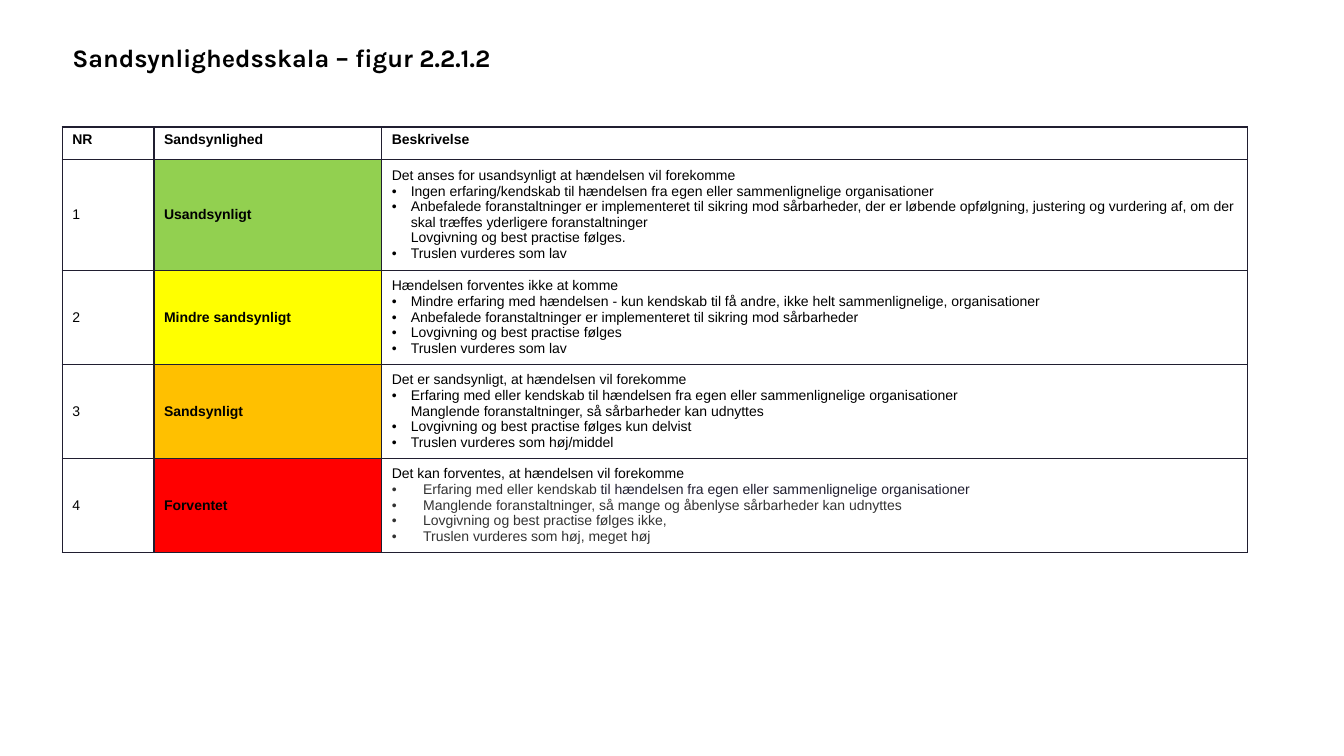
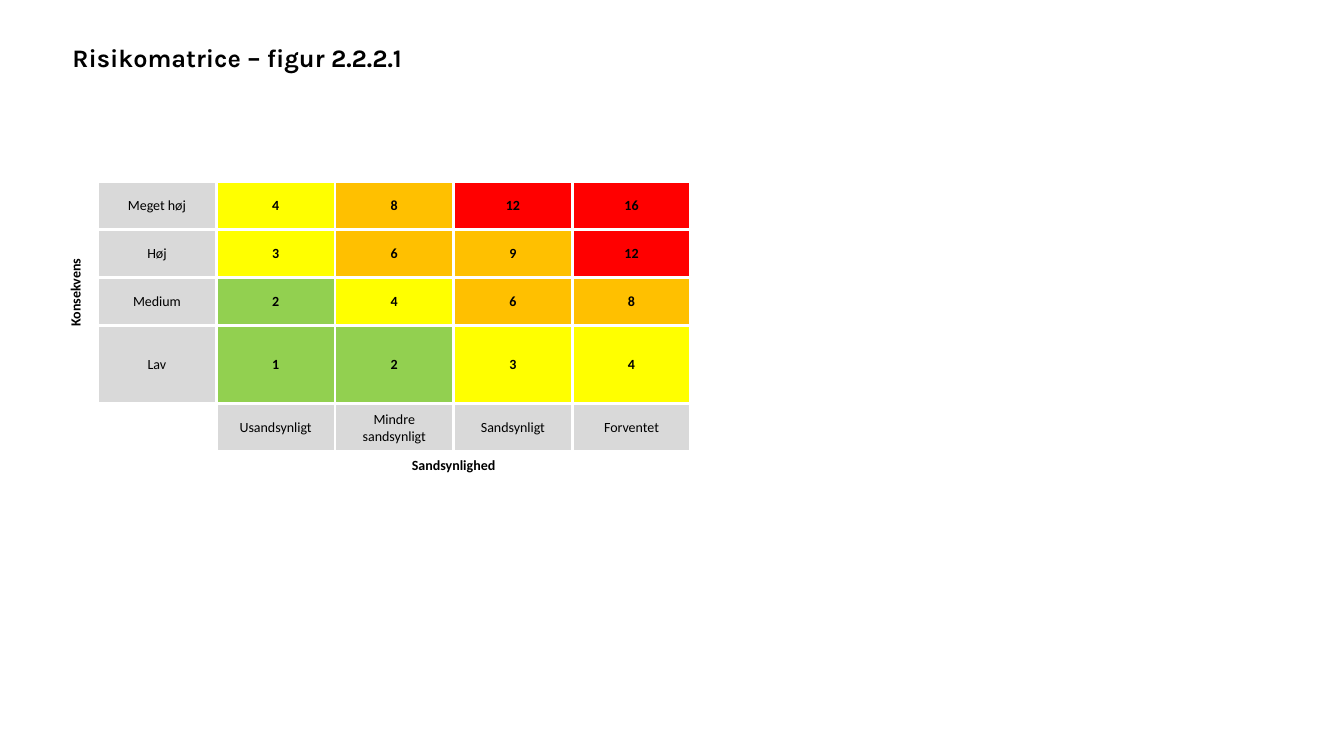
from dataclasses import dataclass

from pptx import Presentation
from pptx.dml.color import RGBColor
from pptx.enum.text import MSO_ANCHOR as Anchor, MSO_AUTO_SIZE as AutoSize, PP_ALIGN as Align
from pptx.oxml.ns import qn
from pptx.util import Cm, Pt
from lxml.etree import SubElement


@dataclass(frozen=True)
class Theme:
    black: str = "000000"
    white: str = "FFFFFF"
    ink: str = "201E30"
    charcoal: str = "333333"
    label: str = "D9D9D9"
    green: str = "92D050"
    yellow: str = "FFFF00"
    orange: str = "FFC000"
    red: str = "FF0000"
    title_font: str = "Karla"
    scale_font: str = "Arial"
    matrix_font: str = "Calibri"
    title_size: int = 18
    table_size: int = 10
    scale_border: float = 1
    matrix_border: float = 2.25


THEME = Theme()
LEFT = 1.57
TITLE_BOX = (LEFT, 0.94, 14.43, 1.02)
LEVELS = ["Usandsynligt", "Mindre sandsynligt", "Sandsynligt", "Forventet"]
LEVEL_COLORS = [THEME.green, THEME.yellow, THEME.orange, THEME.red]
CONSEQUENCES = ["Lav", "Medium", "Høj", "Meget høj"]

# Each description is a lead sentence followed by its bullets.
DESCRIPTIONS = [
    ["Det anses for usandsynligt at hændelsen vil forekomme",
     "Ingen erfaring/kendskab til hændelsen fra egen eller sammenlignelige organisationer",
     "Anbefalede foranstaltninger er implementeret til sikring mod sårbarheder, "
     "der er løbende opfølgning, justering og vurdering af, om der skal træffes "
     "yderligere foranstaltninger\nLovgivning og best practise følges.",
     "Truslen vurderes som lav"],
    ["Hændelsen forventes ikke at komme",
     "Mindre erfaring med hændelsen - kun kendskab til få andre, "
     "ikke helt sammenlignelige, organisationer",
     "Anbefalede foranstaltninger er implementeret til sikring mod sårbarheder",
     "Lovgivning og best practise følges",
     "Truslen vurderes som lav"],
    ["Det er sandsynligt, at hændelsen vil forekomme",
     "Erfaring med eller kendskab til hændelsen fra egen eller sammenlignelige "
     "organisationer\nManglende foranstaltninger, så sårbarheder kan udnyttes",
     "Lovgivning og best practise følges kun delvist",
     "Truslen vurderes som høj/middel"],
    ["Det kan forventes, at hændelsen vil forekomme",
     [("Erfaring med eller kendskab ", THEME.charcoal),
      ("til hændelsen fra egen eller sammenlignelige organisationer", THEME.ink)],
     "Manglende foranstaltninger, så mange og åbenlyse sårbarheder kan udnyttes",
     "Lovgivning og best practise følges ikke,",
     "Truslen vurderes som høj, meget høj"],
]


def write_text(paragraph, text, *, font, size=THEME.table_size, color=THEME.black,
               bold=False, align=Align.LEFT):
    """Append text to the paragraph; a newline becomes a line break."""
    paragraph.alignment = align
    for index, line in enumerate(text.split("\n")):
        if index:
            paragraph.add_line_break()
        run = paragraph.add_run()
        run.text = line
        run.font.name = font
        run.font.size = Pt(size)
        run.font.bold = bold
        run.font.color.rgb = RGBColor.from_string(color)


def set_bullet(paragraph, indent):
    properties = paragraph._p.get_or_add_pPr()
    properties.set("marL", str(Cm(indent)))
    properties.set("indent", str(-Cm(indent)))
    SubElement(properties, qn("a:buFont"), typeface="Arial")
    SubElement(properties, qn("a:buChar"), char="•")


def style_cell(cell, fill, border, width, anchor=Anchor.MIDDLE):
    properties = cell._tc.get_or_add_tcPr()
    for side in ("lnL", "lnR", "lnT", "lnB"):
        line = SubElement(properties, qn(f"a:{side}"), w=str(Pt(width)))
        solid = SubElement(line, qn("a:solidFill"))
        SubElement(solid, qn("a:srgbClr"), val=border)
    cell.fill.solid()
    cell.fill.fore_color.rgb = RGBColor.from_string(fill)
    cell.vertical_anchor = anchor


def add_plain_table(slide, left, top, widths, heights):
    frame = slide.shapes.add_table(len(heights), len(widths), Cm(left), Cm(top),
                                   Cm(sum(widths)), Cm(sum(heights)))
    table = frame.table
    table.first_row = table.horz_banding = False
    for column, width in zip(table.columns, widths):
        column.width = Cm(width)
    for row, height in zip(table.rows, heights):
        row.height = Cm(height)
    return table


def add_titled_slide(presentation, title):
    slide = presentation.slides.add_slide(presentation.slide_layouts.get_by_name("Title Only"))
    shape = slide.shapes.title
    shape.left, shape.top, shape.width, shape.height = map(Cm, TITLE_BOX)
    frame = shape.text_frame
    frame.word_wrap = True
    frame.auto_size = AutoSize.NONE
    frame.vertical_anchor = Anchor.MIDDLE
    write_text(frame.paragraphs[0], title, font=THEME.title_font,
               size=THEME.title_size, bold=True)
    return slide


def write_description(cell, description, indent, color):
    lead, *bullets = description
    frame = cell.text_frame
    write_text(frame.paragraphs[0], lead, font=THEME.scale_font)
    for bullet in bullets:
        paragraph = frame.add_paragraph()
        set_bullet(paragraph, indent)
        parts = [(bullet, color)] if isinstance(bullet, str) else bullet
        for text, part_color in parts:
            write_text(paragraph, text, font=THEME.scale_font, color=part_color)


def add_probability_scale(slide, left, top):
    table = add_plain_table(slide, left, top, [2.31, 5.74, 21.82],
                            [0.81, 2.8] + [2.37] * 3)
    border = (THEME.ink, THEME.scale_border)
    for cell, heading in zip(table.rows[0].cells, ["NR", "Sandsynlighed", "Beskrivelse"]):
        style_cell(cell, THEME.white, *border, anchor=Anchor.TOP)
        write_text(cell.text_frame.paragraphs[0], heading, font=THEME.scale_font, bold=True)

    for number, (level, fill, description) in enumerate(
            zip(LEVELS, LEVEL_COLORS, DESCRIPTIONS), start=1):
        number_cell, level_cell, description_cell = table.rows[number].cells
        for cell, cell_fill in ((number_cell, THEME.white), (level_cell, fill),
                                (description_cell, THEME.white)):
            style_cell(cell, cell_fill, *border)
        write_text(number_cell.text_frame.paragraphs[0], str(number), font=THEME.scale_font)
        write_text(level_cell.text_frame.paragraphs[0], level, font=THEME.scale_font, bold=True)
        is_last = number == len(LEVELS)
        write_description(description_cell, description, indent=0.79 if is_last else 0.48,
                          color=THEME.charcoal if is_last else THEME.black)


def risk_color(score):
    for limit, color in zip((2, 4, 9), LEVEL_COLORS):
        if score <= limit:
            return color
    return THEME.red


def matrix_content(row, column):
    """Return text, fill and boldness for one cell of the risk matrix."""
    size = len(LEVELS)
    if row < size and column >= 2:
        score = (size - row) * (column - 1)
        return str(score), risk_color(score), True
    if row < size and column == 1:
        return CONSEQUENCES[size - 1 - row], THEME.label, False
    if row == size and column >= 2:
        return LEVELS[column - 2], THEME.label, False
    axis_titles = {(0, 0): "Konsekvens", (size + 1, 2): "Sandsynlighed"}
    return axis_titles.get((row, column), ""), THEME.white, True


def add_risk_matrix(slide, left, top):
    size = len(LEVELS)
    widths = [0.89] + [2.99] * (size + 1)
    heights = [1.21] * 3 + [1.97, 1.21, 0.71]
    table = add_plain_table(slide, left, top, widths, heights)
    table.cell(0, 0).merge(table.cell(size - 1, 0))
    table.cell(size + 1, 2).merge(table.cell(size + 1, size + 1))
    for row in range(len(heights)):
        anchor = Anchor.TOP if row == size + 1 else Anchor.MIDDLE
        for column in range(len(widths)):
            cell = table.cell(row, column)
            text, fill, bold = matrix_content(row, column)
            style_cell(cell, fill, THEME.white, THEME.matrix_border, anchor)
            if not cell.is_spanned:
                write_text(cell.text_frame.paragraphs[0], text, font=THEME.matrix_font,
                           bold=bold, align=Align.CENTER)
    table.cell(0, 0)._tc.get_or_add_tcPr().set("vert", "vert270")


def main():
    presentation = Presentation()
    presentation.slide_width = Cm(33.87)
    presentation.slide_height = Cm(19.05)
    scale_slide = add_titled_slide(presentation, "Sandsynlighedsskala – figur 2.2.1.2")
    add_probability_scale(scale_slide, LEFT, 3.2)
    matrix_slide = add_titled_slide(presentation, "Risikomatrice – figur 2.2.2.1")
    add_risk_matrix(matrix_slide, LEFT, 4.57)
    presentation.save("out.pptx")


if __name__ == "__main__":
    main()
